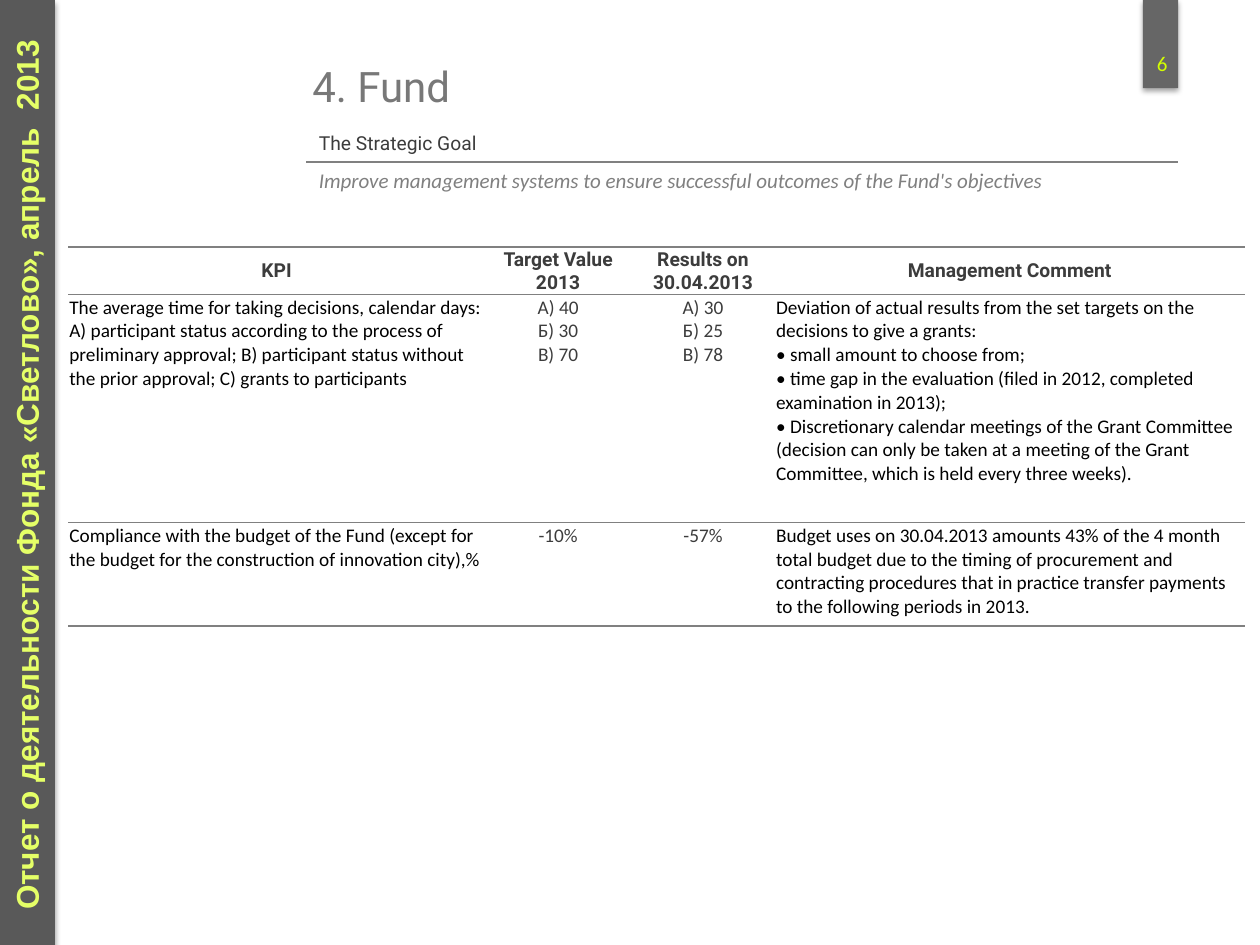
from lxml import etree
from pptx import Presentation
from pptx.dml.color import RGBColor as RGB
from pptx.enum.shapes import MSO_SHAPE as SHAPE
from pptx.enum.text import MSO_ANCHOR as ANCHOR, MSO_AUTO_SIZE as AUTO, PP_ALIGN as ALIGN
from pptx.oxml import parse_xml
from pptx.oxml.ns import nsdecls
from pptx.util import Inches, Pt

# Theme: colours, and type styles as (font, size, colour, bold, italic)
THEME = {
    "tab": "666666", "bar": "595959", "rule": "808080",
    "number": ("Calibri", 12, "D4FF01", False, False),
    "side": ("Arial", 18, "E5FF67", True, False),
    "title": ("Roboto", 24, "787878", False, False),
    "goal": ("Roboto", 11, "3C3C3C", False, False),
    "goal_text": ("Calibri", 12, "808080", False, True),
    "head": ("Roboto", 11, "3C3C3C", True, False),
    "body": ("Calibri", 11, "000000", False, False),
    "value": ("Calibri", 11, "3C3C3C", False, False),
}

# Grid of 100 columns by 75 rows
U = Inches(0.1)
prs = Presentation()
prs.slide_width, prs.slide_height = 100 * U, 75 * U
s = prs.slides.add_slide(prs.slide_layouts[6])


def write(tf, lines, style, align=ALIGN.LEFT):
    """Fill a text frame, one paragraph a line."""
    name, size, color, bold, italic = THEME[style]
    for i, line in enumerate(lines):
        p = tf.add_paragraph() if i else tf.paragraphs[0]
        p.text, p.alignment = line, align
        f = p.font
        f.name, f.size, f.bold, f.italic = name, Pt(size), bold, italic
        f.color.rgb = RGB.from_string(color)


def rule_cell(cell, top, bottom):
    """Leave a cell unfilled, ruled only where asked."""
    pr = cell._tc.get_or_add_tcPr()
    for side, shown in zip("LRTB", (False, False, top, bottom)):
        paint = (f'<a:solidFill><a:srgbClr val="{THEME["rule"]}"/></a:solidFill>'
                 if shown else "<a:noFill/>")
        pr.append(parse_xml(f'<a:ln{side} {nsdecls("a")} w="12700">{paint}</a:ln{side}>'))
    cell.fill.background()


# Page tab and side bar, both with a soft shadow
for x, w, h, color, outlined in ((90.7, 2.8, 7, "tab", False), (0, 4.3, 75, "bar", True)):
    sp = s.shapes.add_shape(SHAPE.RECTANGLE, int(x * U), 0, int(w * U), int(h * U))
    sp.fill.solid()
    sp.fill.fore_color.rgb = RGB.from_string(THEME[color])
    if outlined:
        sp.line.color.rgb = RGB.from_string(THEME[color])
        sp.line.width = Pt(0.75)
    else:
        sp.line.fill.background()
    sp.shadow.inherit = False
    effects = sp._element.spPr.find("{*}effectLst")
    shadow = etree.SubElement(effects, effects.tag.replace("effectLst", "outerShdw"),
                              blurRad=str(Pt(3.1)), dist=str(Pt(1.8)),
                              dir="5400000", rotWithShape="0")
    shadow.append(parse_xml(f'<a:srgbClr {nsdecls("a")} val="000000">'
                            '<a:alpha val="35000"/></a:srgbClr>'))

# Page number, side caption and title
for x, y, w, h, text, style in (
        (90.1, 3, 4.3, 4, "6", "number"),
        (-33.7, 35.4, 71.6, 4, "Отчет о деятельности Фонда «Светлово», апрель  2013", "side"),
        (23.8, 4.3, 63.9, 8.7, "4. Fund", "title")):
    sp = s.shapes.add_textbox(int(x * U), int(y * U), int(w * U), int(h * U))
    tf = sp.text_frame
    tf.word_wrap = style != "side"
    write(tf, [text], style, ALIGN.CENTER if style == "number" else ALIGN.LEFT)
    if style == "number":
        tf.vertical_anchor = ANCHOR.MIDDLE
    if style == "side":
        sp.rotation = 270
        tf.auto_size = AUTO.SHAPE_TO_FIT_TEXT

# KPI table: each cell is a list of paragraphs
KPI = [
    [["KPI"], ["Target Value 2013"], ["Results on 30.04.2013"], ["Management Comment"]],
    [["The average time for taking decisions, calendar days:",
      "A) participant status according to the process of preliminary approval; "
      "B) participant status without the prior approval; C) grants to participants"],
     ["А) 40\nБ) 30", "В) 70"],
     ["А) 30\nБ) 25", "В) 78"],
     ["Deviation of actual results from the set targets on the decisions to give a grants:",
      "• small amount to choose from;",
      "• time gap in the evaluation (filed in 2012, completed  examination in 2013);",
      "• Discretionary calendar meetings of the Grant Committee (decision can only be taken "
      "at a meeting of the Grant Committee, which is held every three weeks)."]],
    [["Compliance with the budget of the Fund (except for the budget for the construction "
      "of innovation city),%"],
     ["-10%"], ["-57%"],
     ["Budget uses on 30.04.2013 amounts 43% of the 4 month total budget due to the timing "
      "of procurement and contracting procedures that in practice transfer payments to the "
      "following periods in 2013."]],
]
COLS, ROWS = (33.1, 11.6, 11.4, 37.3), (3.7, 18.1, 8.2)
table = s.shapes.add_table(len(ROWS), len(COLS), int(5.4 * U), int(19.6 * U),
                           int(sum(COLS) * U), int(sum(ROWS) * U)).table
table.horz_banding = table.first_row = False
for col, w in zip(table.columns, COLS):
    col.width = int(w * U)
for r, (row, h) in enumerate(zip(KPI, ROWS)):
    table.rows[r].height = int(h * U)
    for c, lines in enumerate(row):
        cell = table.cell(r, c)
        cell.margin_left = cell.margin_right = cell.margin_top = Inches(0.01)
        cell.margin_bottom = 0
        cell.vertical_anchor = ANCHOR.TOP if r else ANCHOR.MIDDLE
        is_value = c in (1, 2)
        style = "head" if r == 0 else "value" if is_value else "body"
        write(cell.text_frame, lines, style,
              ALIGN.CENTER if r == 0 or is_value else ALIGN.LEFT)
        rule_cell(cell, True, True)

# Strategic goal: two rows with a rule between them
GOAL = (("The Strategic Goal", "goal", 2.8),
        ("Improve management systems to ensure successful outcomes of the Fund's objectives",
         "goal_text", 3.8))
goal = s.shapes.add_table(2, 1, int(24.3 * U), 10 * U, int(69.2 * U), int(6.6 * U)).table
goal.horz_banding = goal.first_row = False
for r, (text, style, h) in enumerate(GOAL):
    goal.rows[r].height = int(h * U)
    write(goal.cell(r, 0).text_frame, [text], style)
    rule_cell(goal.cell(r, 0), r == 1, r == 0)

prs.save("out.pptx")
